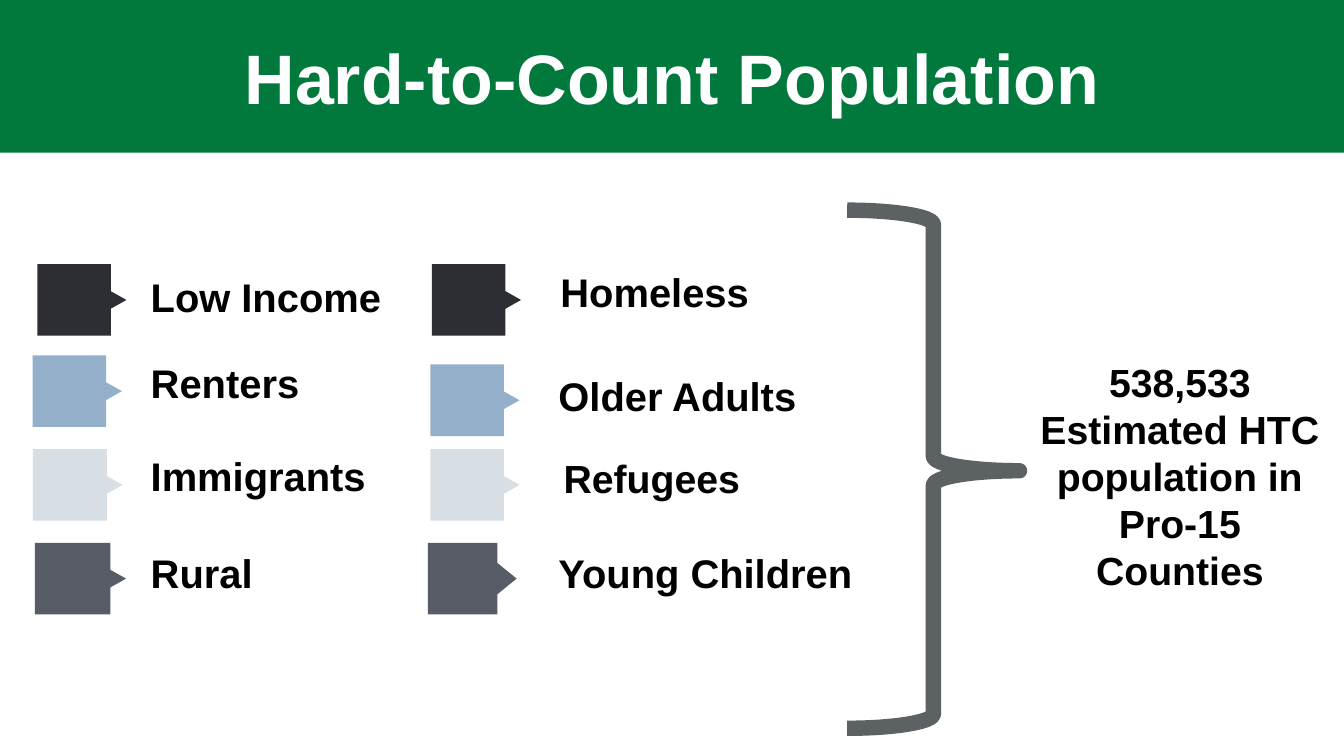
from lxml import etree
from pptx import Presentation
from pptx.dml.color import RGBColor
from pptx.enum import shapes, text
from pptx.oxml.ns import qn
from pptx.util import Pt

WHITE, BLACK, GREEN = "FFFFFF", "000000", "01783C"
DARK, BLUE, PALE, SLATE = "2C2E34", "93AFCA", "D7DEE4", "575C67"


def add_block(kind, left, top, width, height, color):
    shape = slide.shapes.add_shape(kind, Pt(left), Pt(top), Pt(width), Pt(height))
    shape.shadow.inherit = False
    shape.fill.solid()
    shape.fill.fore_color.rgb = RGBColor.from_string(color)
    shape.line.fill.background()
    return shape


def set_text(shape, words, size, color, align, anchor, margins):
    frame = shape.text_frame
    frame.word_wrap = True
    frame.vertical_anchor = anchor
    frame.margin_left, frame.margin_top, frame.margin_right, frame.margin_bottom = map(Pt, margins)
    frame.text = words
    paragraph = frame.paragraphs[0]
    paragraph.alignment = align
    font = paragraph.runs[0].font
    font.name, font.size, font.bold = "Arial", Pt(size), True
    font.color.rgb = RGBColor.from_string(color)


presentation = Presentation()
presentation.slide_width, presentation.slide_height = Pt(1920), Pt(1080)
slide = presentation.slides.add_slide(presentation.slide_layouts[6])

# Title band
band = add_block(shapes.MSO_SHAPE.RECTANGLE, 0, 0, 1920, 218, GREEN)
set_text(band, "Hard-to-Count Population", 100, WHITE,
         text.PP_ALIGN.CENTER, text.MSO_ANCHOR.MIDDLE, (4.3,) * 4)

# Population groups: label, size, colour, marker left, top, width, label left, top
groups = [
    ("Low Income", 57, DARK, 53.3, 377.3, 105, 215.3, 385.2),
    ("Renters", 57, BLUE, 46.8, 507.6, 105, 215.3, 507.6),
    ("Immigrants", 57, PALE, 46.8, 641.5, 106, 215.3, 641.5),
    ("Rural", 57, SLATE, 49.7, 775.4, 108, 215.3, 779.8),
    ("Homeless", 57, DARK, 617, 377.3, 105, 800.6, 377.3),
    ("Older Adults", 57, BLUE, 614.9, 520.6, 105, 797.8, 527),
    ("Refugees", 56, PALE, 614.9, 641.5, 105, 805, 643.3),
    ("Young Children", 57, SLATE, 611.3, 775.4, 99.4, 797.8, 779.8),
]
MARKER_HEIGHT = 102.4
for label, size, color, left, top, width, label_left, label_top in groups:
    add_block(shapes.MSO_SHAPE.RECTANGLE, left, top, width, MARKER_HEIGHT, color)

    # Pointer, turned to the right and centred on the marker's height
    base, depth, offset = (48, 29.5, 12.6) if label == "Young Children" else (34, 30.2, 7.2)
    pointer = add_block(shapes.MSO_SHAPE.ISOSCELES_TRIANGLE, left + width + offset - base / 2,
                        top + (MARKER_HEIGHT - depth) / 2, base, depth, color)
    pointer.rotation = 90

    box = slide.shapes.add_textbox(Pt(label_left), Pt(label_top), Pt(455), Pt(76.3))
    set_text(box, label, size, BLACK, text.PP_ALIGN.LEFT, text.MSO_ANCHOR.BOTTOM,
             (0, 3.6, 7.2, 3.6))

# Brace that gathers the groups
brace = slide.shapes.add_shape(shapes.MSO_SHAPE.RIGHT_BRACE, Pt(1210.3), Pt(300.2), Pt(246.2), Pt(740.2))
brace.shadow.inherit = False
brace.fill.background()
brace.adjustments[0], brace.adjustments[1] = 0.083, 0.503
brace.line.width = Pt(22)
brace.line.color.rgb = RGBColor.from_string("262E31")
brace_color = brace.line.fill._xPr.find(".//" + qn("a:srgbClr"))
etree.SubElement(brace_color, qn("a:alpha"), val="75000")

# Estimated total
total = slide.shapes.add_textbox(Pt(1474.6), Pt(507.6), Pt(422), Pt(347))
set_text(total, "538,533 Estimated HTC population in Pro-15 Counties", 56, BLACK,
         text.PP_ALIGN.CENTER, text.MSO_ANCHOR.TOP, (4.3,) * 4)

presentation.save("out.pptx")
